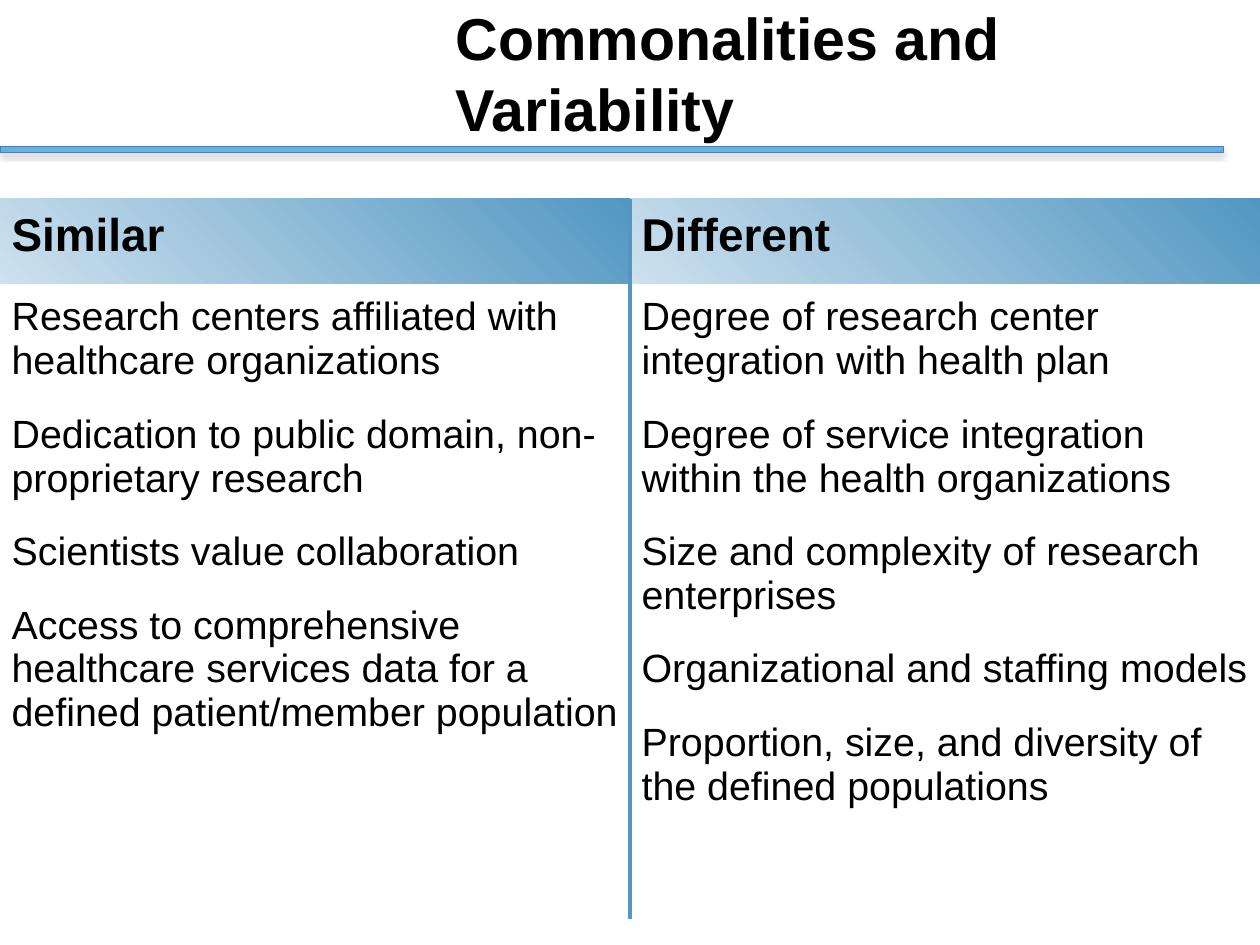
from lxml.etree import SubElement
from pptx import Presentation
from pptx.dml.color import RGBColor
from pptx.enum.shapes import MSO_SHAPE
from pptx.enum.text import MSO_ANCHOR
from pptx.oxml import parse_xml
from pptx.oxml.ns import nsdecls, qn
from pptx.util import Cm, Pt

BLACK = RGBColor(0x00, 0x00, 0x00)
BAR_BLUE = RGBColor(0x6B, 0xAF, 0xE0)
BAR_EDGE = RGBColor(0x4A, 0x7E, 0xBB)
PALE_BLUE = RGBColor(0xCD, 0xE1, 0xEE)
DEEP_BLUE = RGBColor(0x52, 0x97, 0xC2)

COLUMNS = {
    "Similar": [
        "Research centers affiliated with healthcare organizations",
        "Dedication to public domain, non-proprietary research",
        "Scientists value collaboration",
        "Access to comprehensive healthcare services data for a defined patient/member population",
    ],
    "Different": [
        "Degree of research center integration with health plan",
        "Degree of service integration within the health organizations",
        "Size and complexity of research enterprises",
        "Organizational and staffing models",
        "Proportion, size, and diversity of the defined populations",
    ],
}


def write(para, text, size=24, bold=False, before=0, after=0):
    para.space_before = Pt(before)
    para.space_after = Pt(after)
    span = para.add_run()
    span.text = text
    span.font.name = "Arial"
    span.font.size = Pt(size)
    span.font.bold = bold
    span.font.color.rgb = BLACK


deck = Presentation()
deck.slide_width = Cm(27.1)
deck.slide_height = Cm(20.32)
page = deck.slides.add_slide(deck.slide_layouts[6])

bar = page.shapes.add_shape(MSO_SHAPE.RECTANGLE, 0, Cm(3.15), Cm(26.31), Cm(0.13))
bar.fill.solid()
bar.fill.fore_color.rgb = BAR_BLUE
bar.line.color.rgb = BAR_EDGE
bar.line.width = Pt(0.75)
bar.shadow.inherit = False
effects = bar._element.spPr.find(qn("a:effectLst"))
effects.append(parse_xml(
    f'<a:outerShdw {nsdecls("a")} blurRad="39400" dist="23000" dir="5400000" rotWithShape="0">'
    '<a:srgbClr val="808080"><a:alpha val="35000"/></a:srgbClr></a:outerShdw>'
))

title = page.shapes.add_textbox(Cm(9.55), 0, Cm(16.71), Cm(3.1)).text_frame
title.word_wrap = True
title.vertical_anchor = MSO_ANCHOR.MIDDLE
write(title.paragraphs[0], "Commonalities and Variability", size=36, bold=True)

table = page.shapes.add_table(2, 2, 0, Cm(4.27), Cm(27.1), Cm(15.49)).table
table.first_row = False
table.horz_banding = False
table.rows[0].height = Cm(1.83)
table.rows[1].height = Cm(13.66)

for column, (heading, points) in enumerate(COLUMNS.items()):
    divider = "a:lnL" if column else "a:lnR"
    for row in range(2):
        cell = table.cell(row, column)
        cell.margin_left = cell.margin_right = Cm(0.25)
        cell.margin_top = cell.margin_bottom = Cm(0.25)
        properties = cell._tc.get_or_add_tcPr()
        for side in ("a:lnL", "a:lnR", "a:lnT", "a:lnB"):
            border = SubElement(properties, qn(side), w=str(Pt(2.25)))
            if side == divider:
                paint = SubElement(border, qn("a:solidFill"))
                SubElement(paint, qn("a:srgbClr"), val=str(DEEP_BLUE))
            else:
                SubElement(border, qn("a:noFill"))

    header = table.cell(0, column)
    header.fill.gradient()
    header.fill.gradient_angle = 45
    for stop, color in zip(header.fill.gradient_stops, (PALE_BLUE, DEEP_BLUE)):
        stop.color.rgb = color
    write(header.text_frame.paragraphs[0], heading, size=28, bold=True)

    body = table.cell(1, column)
    body.fill.background()
    for index, point in enumerate(points):
        para = body.text_frame.add_paragraph() if index else body.text_frame.paragraphs[0]
        write(para, point, before=12 if index else 0, after=6)

deck.save("out.pptx")
